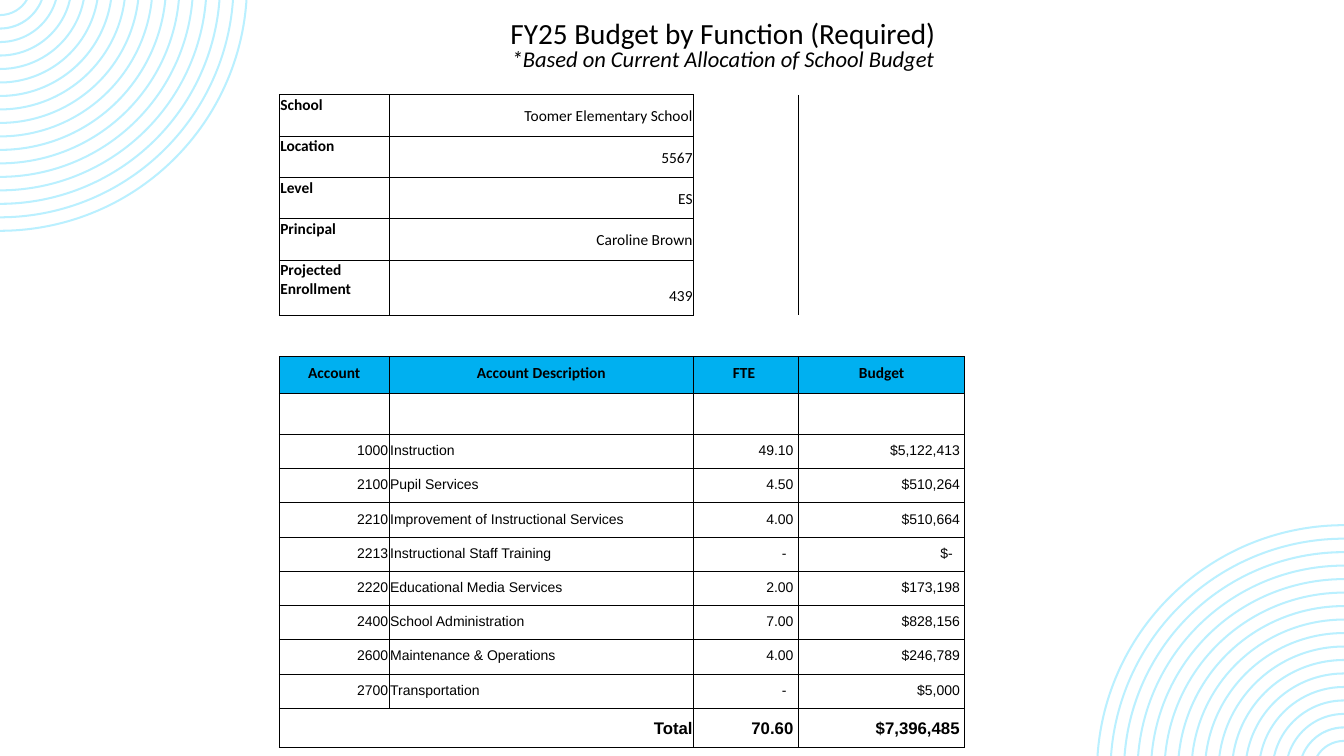
"""Build the school budget by function slide."""
from math import asin, cos, degrees

from pptx import Presentation
from pptx.dml.color import RGBColor as RGB
from pptx.enum.text import MSO_ANCHOR as ANCHOR, PP_ALIGN as ALIGN
from pptx.oxml.ns import qn
from pptx.util import Inches, Pt
from lxml.etree import SubElement as Sub

TITLE = [
    ("FY25 Budget by Function (Required)", {"size": Pt(20.9), "italic": False}),
    ("*Based on Current Allocation of School Budget", {"size": Pt(16.1), "italic": True}),
]
SCHOOL = [
    ("School", "Toomer Elementary School"),
    ("Location", "5567"),
    ("Level", "ES"),
    ("Principal", "Caroline Brown"),
    ("Projected Enrollment", "439"),
]
HEAD = ["Account", "Account Description", "FTE", "Budget"]
BUDGET = [
    ("1000", "Instruction", "49.10", "$5,122,413"),
    ("2100", "Pupil Services", "4.50", "$510,264"),
    ("2210", "Improvement of Instructional Services", "4.00", "$510,664"),
    ("2213", "Instructional Staff Training", "-", "$-"),
    ("2220", "Educational Media Services", "2.00", "$173,198"),
    ("2400", "School Administration", "7.00", "$828,156"),
    ("2600", "Maintenance & Operations", "4.00", "$246,789"),
    ("2700", "Transportation", "-", "$5,000"),
]
TOTAL = ["Total", "", "70.60", "$7,396,485"]
COLS = [1.09, 3.02, 1.04, 1.65]
ROWS = [0.41] * 4 + [0.55, 0.41, 0.36, 0.41] + [0.34] * len(BUDGET) + [0.39]
LEFT, TOP = 2.77, 0.94
WIDE, HIGH = 13.33, 7.5
BLACK, WHITE, BLUE, PALE = "000000", "FFFFFF", "00B0F0", "BAF0FF"
RINGS, BIG, STEP, THICK, DROP = 17, 2.46, 0.13, 0.02, 0.16
FAN = (2.45, 2.3)
STEP = (BIG - 0.32) / (RINGS - 1)
LABEL = {"name": "Calibri", "size": Pt(11), "bold": True}
VALUE = {**LABEL, "bold": False}
BODY = {"name": "Arial", "size": Pt(10), "bold": False}
SUM = {"name": "Arial", "size": Pt(12), "bold": True}


def paint(fill, color):
    fill.solid()
    fill.fore_color.rgb = RGB.from_string(color)


def style(font, look):
    for key, val in look.items():
        setattr(font, key, val)
    paint(font.fill, BLACK)


def point(track, tag, x, y):
    Sub(Sub(track, qn(tag)), qn("a:pt"), x=str(Inches(x)), y=str(Inches(y)))


def sweep(track, rad, start, swing):
    size = str(Inches(rad))
    turns = {"stAng": start, "swAng": swing}
    turns = {key: str(round(val * 60000)) for key, val in turns.items()}
    Sub(track, qn("a:arcTo"), wR=size, hR=size, **turns)


def draw_rings(slide, left, top, turn):
    wide, high = (Inches(n) for n in FAN)
    form = slide.shapes.build_freeform(0, 0, scale=1.0)
    form.add_line_segments([(wide, 0), (wide, high), (0, high)], close=True)
    shape = form.convert_to_shape(Inches(left), Inches(top))
    shape.rotation = turn
    shape.shadow.inherit = False
    paint(shape.fill, PALE)
    shape.line.fill.background()
    track = shape._element.find(".//" + qn("a:path"))
    for part in list(track):
        track.remove(part)
    for num in range(RINGS):
        outer = BIG - STEP * num
        inner = outer - THICK
        low, dip = asin(DROP / outer), asin(DROP / inner)
        point(track, "a:moveTo", outer * cos(low), 0)
        sweep(track, outer, degrees(low), 90 - degrees(low))
        point(track, "a:lnTo", 0, inner - DROP)
        sweep(track, inner, 90, degrees(dip) - 90)
        Sub(track, qn("a:close"))


def draw_title(slide):
    box = slide.shapes.add_textbox(Inches(2.67), Inches(0.14), Inches(9), Inches(0.66))
    frame = box.text_frame
    frame.word_wrap = True
    frame.vertical_anchor = ANCHOR.MIDDLE
    for i, (text, look) in enumerate(TITLE):
        para = frame.add_paragraph() if i else frame.paragraphs[0]
        para.alignment, para.line_spacing = ALIGN.CENTER, 0.8
        run = para.add_run()
        run.text = text
        style(run.font, {"name": "Calibri", **look})


def edge(cell, sides):
    props = cell._tc.get_or_add_tcPr()
    for i, side in enumerate("LRTB"):
        line = Sub(props, qn("a:ln" + side), w=str(Pt(0.75)))
        if side in sides:
            Sub(Sub(line, qn("a:solidFill")), qn("a:srgbClr"), val=BLACK)
        else:
            Sub(line, qn("a:noFill"))
        props.remove(line)
        props.insert(i, line)


def write(cell, text, look, align, right=0.01, anchor=ANCHOR.BOTTOM, space=1.15):
    pads = {"left": 0.01, "top": 0.01, "right": right, "bottom": 0.1}
    for key, val in pads.items():
        setattr(cell, "margin_" + key, Inches(val))
    cell.vertical_anchor = anchor
    para = cell.text_frame.paragraphs[0]
    para.alignment, para.line_spacing = align, space
    run = para.add_run()
    run.text = text
    style(run.font, look)


def draw_table(slide):
    size = [Inches(n) for n in (LEFT, TOP, sum(COLS), sum(ROWS))]
    table = slide.shapes.add_table(len(ROWS), len(COLS), *size).table
    table.first_row = table.horz_banding = False
    for col, wide in zip(table.columns, COLS):
        col.width = Inches(wide)
    for row, high in zip(table.rows, ROWS):
        row.height = Inches(high)
    gap = len(SCHOOL)
    head, last = gap + 1, len(ROWS) - 1
    for r in range(len(ROWS)):
        for c in range(len(COLS)):
            cell = table.cell(r, c)
            if r > gap:
                paint(cell.fill, BLUE if r == head else WHITE)
                edge(cell, "LRTB")
            else:
                cell.fill.background()
                upper = ["LRTB", "LRTB", "LR", "L"][c]
                edge(cell, upper if r < gap else "TB" if c < 2 else "B")
    for r, (name, value) in enumerate(SCHOOL):
        write(table.cell(r, 0), name, LABEL, ALIGN.LEFT, anchor=ANCHOR.TOP, space=1.0)
        write(table.cell(r, 1), value, VALUE, ALIGN.RIGHT)
    for c, name in enumerate(HEAD):
        write(table.cell(head, c), name, LABEL, ALIGN.CENTER, 0.05 if name == "FTE" else 0.01)
    for r, line in enumerate(BUDGET + [TOTAL], head + 2):
        for c, text in enumerate(line):
            if not text:
                continue
            right = 0.01 if c < 2 else 0.12 if text.endswith("-") else 0.05
            plain = c == 1
            write(table.cell(r, c), text, SUM if r == last else BODY,
                  ALIGN.LEFT if plain else ALIGN.RIGHT, right, space=1.0 if plain else 1.15)
    table.cell(last, 0).merge(table.cell(last, 1))


def main():
    deck = Presentation()
    deck.slide_width, deck.slide_height = Inches(WIDE), Inches(HIGH)
    slide = deck.slides.add_slide(deck.slide_layouts[6])
    paint(slide.background.fill, WHITE)
    draw_rings(slide, 0, 0, 0)
    draw_rings(slide, WIDE - FAN[0], HIGH - FAN[1], 180)
    draw_title(slide)
    draw_table(slide)
    deck.save("out.pptx")


if __name__ == "__main__":
    main()
